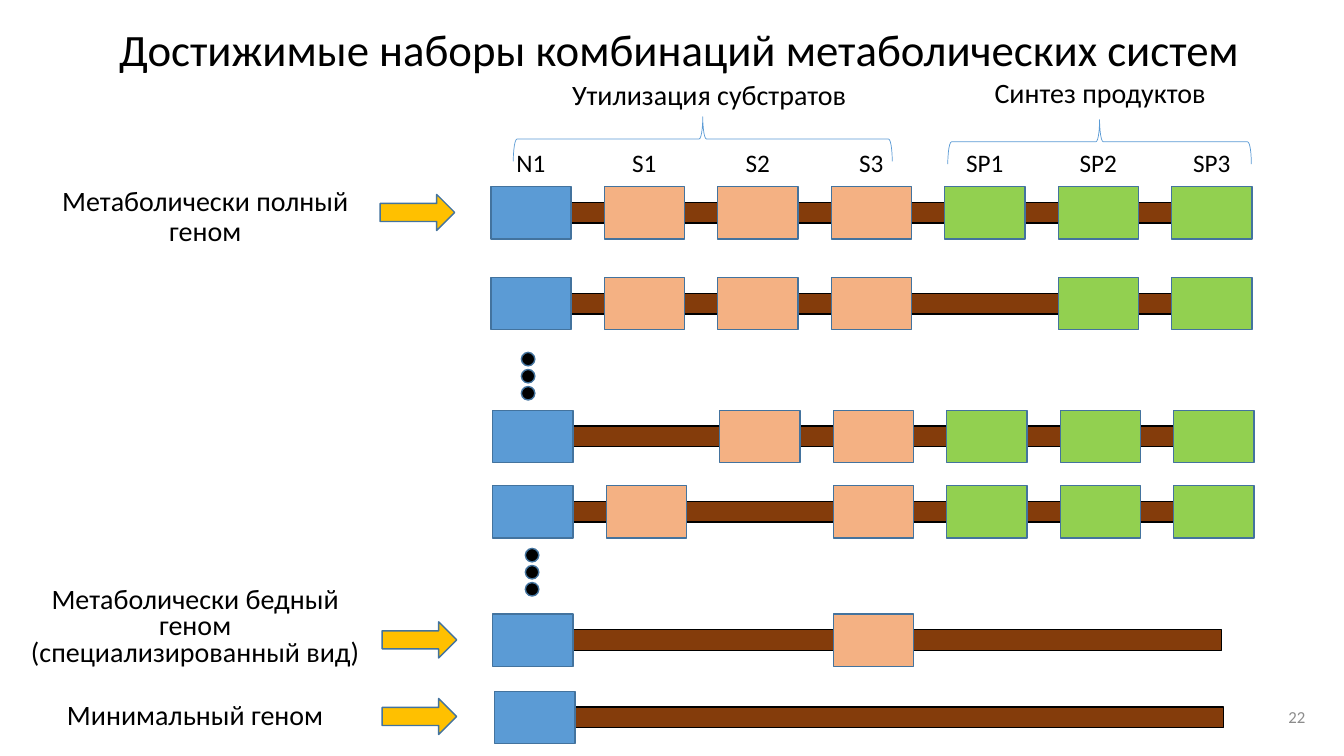
import pptx
import pptx.dml.color
import pptx.enum.shapes
import pptx.enum.text
import pptx.util

Cm = pptx.util.Cm
Pt = pptx.util.Pt
MSO = pptx.enum.shapes.MSO_SHAPE
ALIGN = pptx.enum.text.PP_ALIGN
ANCHOR = pptx.enum.text.MSO_ANCHOR

FONT = "Calibri"
BLACK, GREY = "000000", "8C8C8C"
BLUE, PEACH, GREEN = "5B9BD5", "F4B183", "92D050"
BROWN, GOLD, OUTLINE = "843C0B", "FFC000", "43739E"

# Lengths are centimetres
BLOCK_W, BLOCK_H, PITCH = 2.02, 1.32, 2.86
BAR_W, BAR_H = 17.55, 0.52
GENES = [("N1", BLUE), ("S1", PEACH), ("S2", PEACH), ("S3", PEACH),
         ("SP1", GREEN), ("SP2", GREEN), ("SP3", GREEN)]

# Left, top and the genes present
GENOMES = [
    (12.37, 4.70, "N1 S1 S2 S3 SP1 SP2 SP3"),
    (12.37, 6.99, "N1 S1 S2 S3 SP2 SP3"),
    (12.42, 10.34, "N1 S2 S3 SP1 SP2 SP3"),
    (12.42, 12.24, "N1 S1 S3 SP1 SP2 SP3"),
    (12.42, 15.47, "N1 S3"),
    (12.47, 17.42, "N1"),
]

# Text, left, top, width, height, line spacing
CAPTIONS = [
    ("Метаболически полный геном", 1.30, 4.60, 7.75, 2.24, 0.9),
    ("Метаболически бедный геном (специализированный вид)",
     0.41, 14.68, 9.02, 2.51, 0.8),
    ("Минимальный геном", 0.41, 17.55, 9.02, 1.17, 0.9),
    ("Утилизация субстратов", 14.00, 1.93, 7.75, 1.45, 0.9),
    ("Синтез продуктов", 23.85, 1.88, 7.75, 1.45, 0.9),
]


def rgb(value):
    return pptx.dml.color.RGBColor.from_string(value)


def write(tf, text, size, color=BLACK, align=ALIGN.CENTER, spacing=1.0,
          anchor=ANCHOR.TOP):
    tf.word_wrap = True
    tf.auto_size = pptx.enum.text.MSO_AUTO_SIZE.NONE
    tf.vertical_anchor = anchor
    p = tf.paragraphs[0]
    p.alignment = align
    p.line_spacing = spacing
    r = p.add_run()
    r.text = text
    r.font.name = FONT
    r.font.size = Pt(size)
    r.font.color.rgb = rgb(color)


def add_text(s, box, text, size, **style):
    sp = s.shapes.add_textbox(*map(Cm, box))
    write(sp.text_frame, text, size, **style)


def add_figure(s, kind, box, fill=None, line=OUTLINE, width=1):
    sp = s.shapes.add_shape(kind, *map(Cm, box))
    sp.shadow.inherit = False
    if fill:
        sp.fill.solid()
        sp.fill.fore_color.rgb = rgb(fill)
    else:
        sp.fill.background()
    sp.line.color.rgb = rgb(line)
    sp.line.width = Pt(width)
    return sp


def add_genome(s, left, top, present):
    """Draw the strand and the gene blocks it carries."""
    bar = (left + 0.82, top + (BLOCK_H - BAR_H) / 2, BAR_W, BAR_H)
    add_figure(s, MSO.RECTANGLE, bar, BROWN, BLACK)
    for i, (gene, color) in enumerate(GENES):
        if gene in present.split():
            box = (left + i * PITCH, top, BLOCK_W, BLOCK_H)
            add_figure(s, MSO.RECTANGLE, box, color)


def add_ellipsis(s, left, top):
    """Draw three dots that stand for the omitted genomes."""
    for i in range(3):
        add_figure(s, MSO.OVAL, (left, top + i * 0.43, 0.34, 0.34), BLACK)


def add_brace(s, left, top, length):
    sp = add_figure(s, MSO.LEFT_BRACE, (left, top, 1.12, length),
                    line=BLUE, width=0.5)
    sp.rotation = 90


def main():
    prs = pptx.Presentation()
    prs.slide_width, prs.slide_height = Cm(33.87), Cm(19.05)
    s = prs.slides.add_slide(prs.slide_layouts[5])

    title = s.shapes.title
    title.left, title.top = Cm(2.64), Cm(-0.25)
    title.width, title.height = Cm(28.98), Cm(3.1)
    write(title.text_frame, "Достижимые наборы комбинаций метаболических систем",
          32, spacing=0.9, anchor=ANCHOR.MIDDLE)

    for genome in GENOMES:
        add_genome(s, *genome)
    for i, (gene, _) in enumerate(GENES):
        add_text(s, (GENOMES[0][0] + i * PITCH, 3.59, BLOCK_W, 1.02), gene, 18)

    add_ellipsis(s, 13.14, 8.88)
    add_ellipsis(s, 13.24, 13.82)
    for left, top in [(9.58, 4.90), (9.63, 15.67), (9.63, 17.60)]:
        add_figure(s, MSO.RIGHT_ARROW, (left, top, 1.88, 0.91), GOLD)
    add_brace(s, 17.15, -1.27, 9.55)
    add_brace(s, 27.15, -0.25, 7.65)

    for text, *box, spacing in CAPTIONS:
        add_text(s, box, text, 20, spacing=spacing)
    add_text(s, (25.53, 17.55, 7.62, 1.02), "22", 12, color=GREY,
             align=ALIGN.RIGHT, anchor=ANCHOR.MIDDLE)
    prs.save("out.pptx")


if __name__ == "__main__":
    main()
